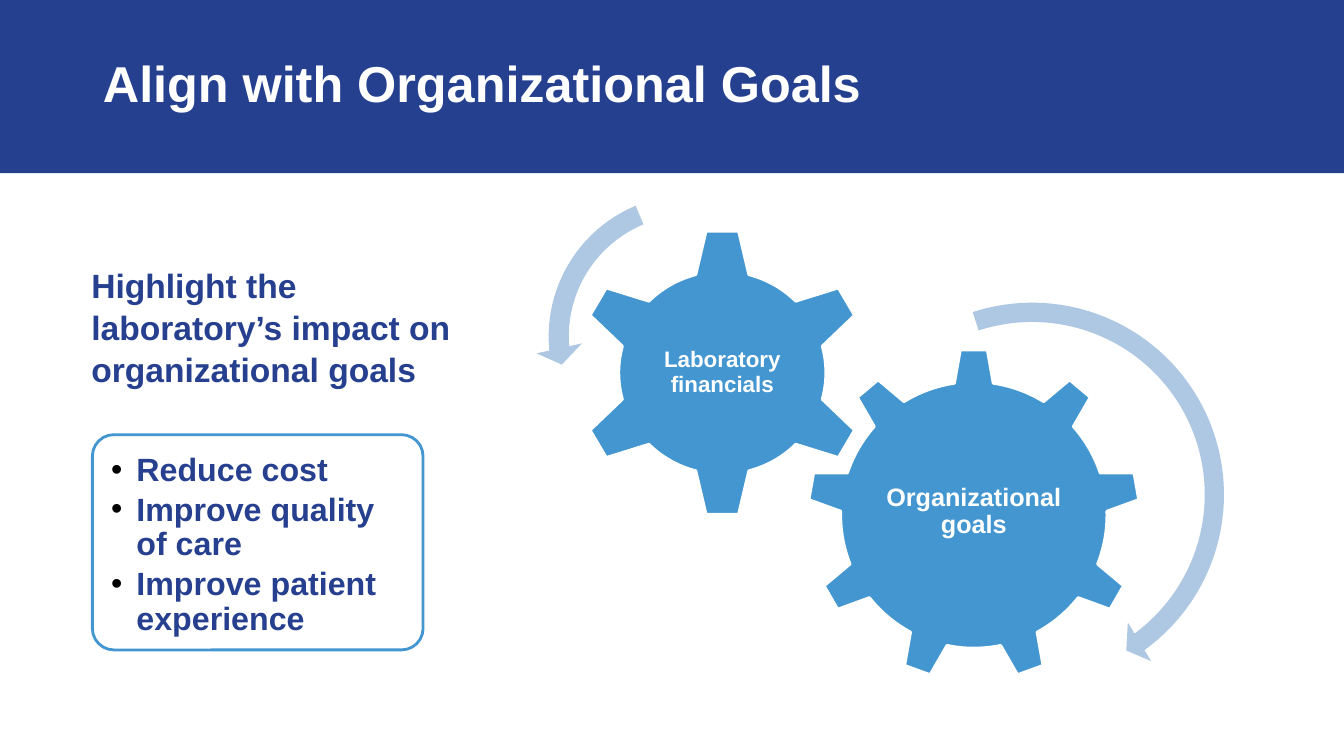
import pptx
import pptx.dml.color
import pptx.enum.shapes
import pptx.enum.text
import pptx.oxml
import pptx.oxml.ns
import pptx.util

NAVY, BLUE, PALE, WHITE, BLACK = "25408F", "4496D1", "AEC8E3", "FFFFFF", "000000"
TEXT_NAVY = "26408F"
FONT = "Arial"
SHAPES = pptx.enum.shapes.MSO_SHAPE
ALIGN = pptx.enum.text.PP_ALIGN
ANCHOR = pptx.enum.text.MSO_ANCHOR


def px(length):
    return pptx.util.Emu(length * 9525)


def color(hex_string):
    return pptx.dml.color.RGBColor.from_string(hex_string)


def add_shape(slide, kind, box, fill, line=None):
    shape = slide.shapes.add_shape(kind, *map(px, box))
    shape.shadow.inherit = False
    shape.fill.solid()
    shape.fill.fore_color.rgb = color(fill)
    if line:
        shape.line.color.rgb = color(line)
        shape.line.width = pptx.util.Pt(2)
    else:
        shape.line.fill.background()
    return shape


def set_frame(shape, anchor, side, top):
    frame = shape.text_frame
    frame.word_wrap = True
    frame.vertical_anchor = anchor
    frame.margin_left = frame.margin_right = px(side)
    frame.margin_top = frame.margin_bottom = px(top)
    return frame


def write(paragraph, text, size, text_color, spacing=0.9, align=ALIGN.LEFT):
    paragraph.alignment = align
    paragraph.line_spacing = spacing
    run = paragraph.add_run()
    run.text = text
    run.font.name = FONT
    run.font.size = pptx.util.Pt(size)
    run.font.bold = True
    run.font.color.rgb = color(text_color)


def add_text(slide, box, anchor, text, size, text_color, spacing):
    text_box = slide.shapes.add_textbox(*map(px, box))
    frame = set_frame(text_box, anchor, 10, 5)
    write(frame.paragraphs[0], text, size, text_color, spacing)


def add_bullet(paragraph):
    properties = paragraph._p.get_or_add_pPr()
    properties.set("marL", str(px(24)))
    properties.set("indent", str(px(-24)))
    namespace = pptx.oxml.ns.nsdecls("a")
    for xml in (
        f'<a:buClr {namespace}><a:srgbClr val="{BLACK}"/></a:buClr>',
        f'<a:buFont {namespace} typeface="{FONT}"/>',
        f'<a:buChar {namespace} char="•"/>',
    ):
        properties.append(pptx.oxml.parse_xml(xml))


def title_band(slide, box):
    left, top, width, height = box
    add_shape(slide, SHAPES.RECTANGLE, box, NAVY)
    add_text(slide, (left + 88, top + 21, width - 194, height - 42),
             ANCHOR.MIDDLE, "Align with Organizational Goals", 36, WHITE, 0.9)


def goals_panel(slide, box):
    """Statement above a rounded card of bulleted goals."""
    left, top, width, height = box
    add_text(slide, (left, top, width, 149), ANCHOR.TOP,
             "Highlight the laboratory’s impact on organizational goals",
             24, TEXT_NAVY, 1.05)
    card = add_shape(slide, SHAPES.ROUNDED_RECTANGLE,
                     (left + 11, top + 169, width - 90, height - 169), WHITE, BLUE)
    card.adjustments[0] = 0.1
    frame = set_frame(card, ANCHOR.TOP, 12, 12)
    goals = ("Reduce cost", "Improve quality of care", "Improve patient experience")
    for index, goal in enumerate(goals):
        paragraph = frame.add_paragraph() if index else frame.paragraphs[0]
        write(paragraph, goal, 23, TEXT_NAVY)
        if index:
            paragraph.space_before = pptx.util.Pt(3.5)
        add_bullet(paragraph)


def add_gear(slide, kind, box, text, size):
    gear = add_shape(slide, kind, box, BLUE, WHITE)
    frame = set_frame(gear, ANCHOR.MIDDLE, 2, 2)
    write(frame.paragraphs[0], text, size, WHITE, align=ALIGN.CENTER)


def add_turn_arrow(slide, kind, box, thickness, head, angles):
    """Curved arrow; angles are head length, end and start in degrees."""
    arrow = add_shape(slide, kind, box, PALE)
    turns = [angle * 0.6 for angle in angles]
    for index, value in enumerate((thickness, *turns, head)):
        arrow.adjustments[index] = value


def gear_diagram(slide, box):
    left, top = box[:2]
    add_gear(slide, SHAPES.GEAR_9, (left + 259, top + 159, 317, 317),
             "Organizational goals", 18)
    add_gear(slide, SHAPES.GEAR_6, (left + 38, top + 44, 280, 276),
             "Laboratory financials", 16)
    add_turn_arrow(slide, SHAPES.CIRCULAR_ARROW, (left + 278, top + 103, 390, 390),
                   0.047, 0.055, (4.98, 53.9, 251.95))
    add_turn_arrow(slide, SHAPES.LEFT_CIRCULAR_ARROW, (left, top, 295, 295),
                   0.065, 0.075, (7.17, 174.82, 247.3))


def main():
    presentation = pptx.Presentation()
    presentation.slide_width = px(1280)
    presentation.slide_height = px(720)
    slide = presentation.slides.add_slide(presentation.slide_layouts[6])
    title_band(slide, (0, 0, 1280, 165))
    gear_diagram(slide, (510, 173, 668, 493))
    goals_panel(slide, (77, 245, 405, 374))
    presentation.save("out.pptx")


if __name__ == "__main__":
    main()
